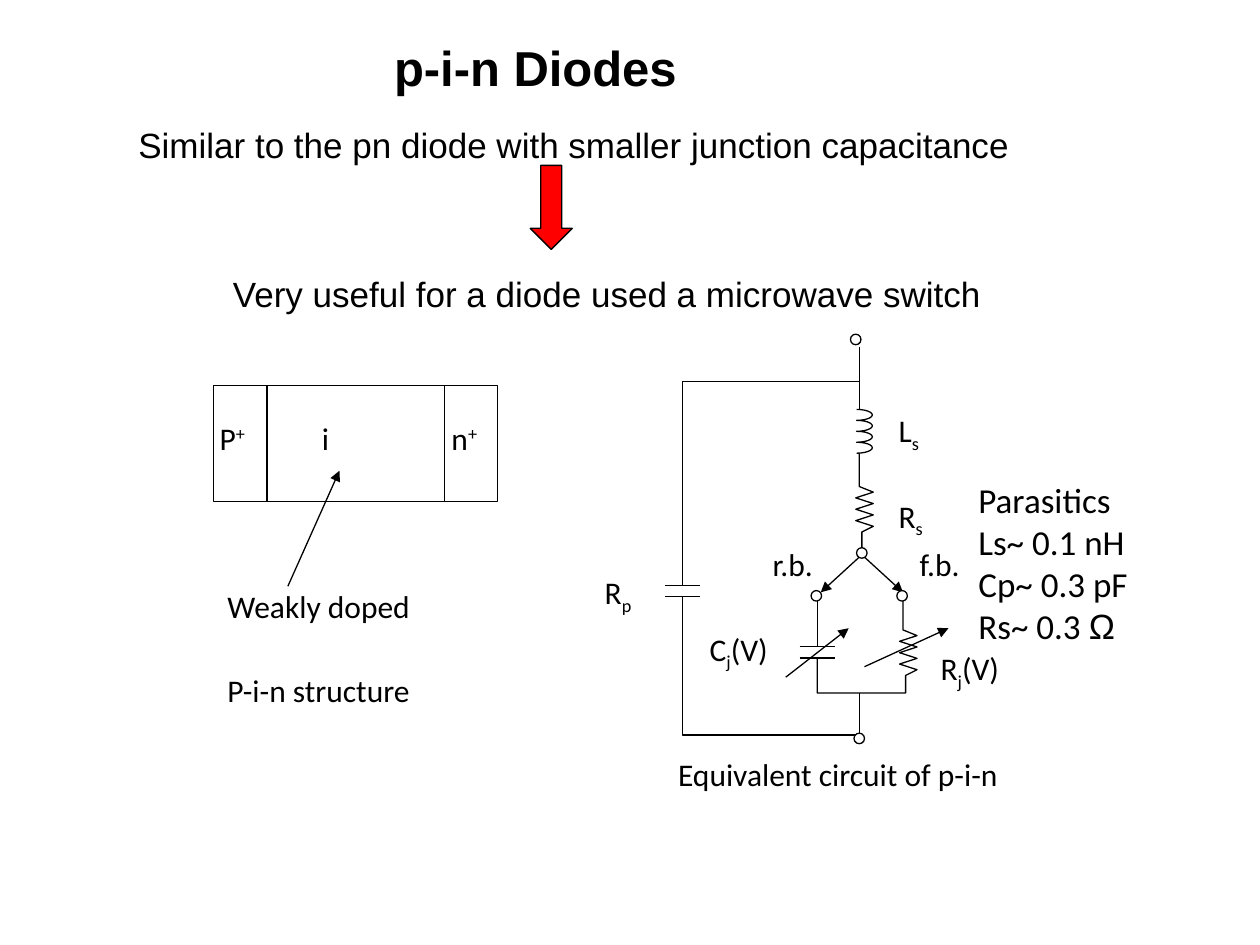
from dataclasses import dataclass
from math import cos, pi, sin

from lxml import etree
from pptx import Presentation
from pptx.dml.color import RGBColor
from pptx.enum import shapes, text
from pptx.oxml import ns
from pptx.util import Pt


@dataclass(frozen=True)
class Theme:
    ink: RGBColor = RGBColor(0, 0, 0)
    paper: RGBColor = RGBColor(255, 255, 255)
    red: RGBColor = RGBColor(255, 0, 0)
    head: str = "Arial"
    body: str = "Calibri"
    title: int = 28
    large: int = 20
    small: int = 18
    line: float = 0.75


THEME = Theme()
SUB, SUP = -25, 30


def style(run, font, size, bold=False, base=0):
    run.font.name, run.font.size, run.font.bold = font, Pt(size), bold
    run.font.color.rgb = THEME.ink
    if base:
        run.font._element.set("baseline", str(base * 1000))


def frame(slide, box, pad=(7.2, 3.6)):
    """Add a wrapping text box and return its text frame."""
    tf = slide.shapes.add_textbox(*map(Pt, box)).text_frame
    tf.word_wrap = True
    tf.margin_left = tf.margin_right = Pt(pad[0])
    tf.margin_top = tf.margin_bottom = Pt(pad[1])
    return tf


def label(slide, x, y, width, *parts):
    """Place a small label; a part is a string or a (string, baseline) pair."""
    para = frame(slide, (x, y, width, 30), (1.5, 0.75)).paragraphs[0]
    for part in parts:
        word, base = (part, 0) if isinstance(part, str) else part
        run = para.add_run()
        run.text = word
        style(run, THEME.body, THEME.small, base=base)


def pen(shape):
    shape.line.color.rgb = THEME.ink
    shape.line.width = Pt(THEME.line)


def solid(slide, kind, box, fill=None):
    shape = slide.shapes.add_shape(kind, *map(Pt, box))
    shape.shadow.inherit = False
    pen(shape)
    if fill is None:
        shape.fill.background()
    else:
        shape.fill.solid()
        shape.fill.fore_color.rgb = fill
    return shape


def wire(slide, start, end, arrow=False):
    link = slide.shapes.add_connector(
        shapes.MSO_CONNECTOR.STRAIGHT, *map(Pt, (*start, *end)))
    pen(link)
    if arrow:
        etree.SubElement(link.line._get_or_add_ln(), ns.qn("a:tailEnd"), type="triangle")
    etree.SubElement(link._element.spPr, ns.qn("a:effectLst"))


def trace(slide, points):
    """Draw an open, unfilled outline through the points."""
    spots = [(Pt(x), Pt(y)) for x, y in points]
    build = slide.shapes.build_freeform(*spots[0])
    build.add_line_segments(spots[1:], close=False)
    shape = build.convert_to_shape()
    shape.shadow.inherit = False
    shape.fill.background()
    pen(shape)


def zigzag(x, y):
    """Points of a resistor 26 high that starts on a wire at x, y."""
    teeth = [(x + (8 if i % 2 else -2), y + 3.25 * i) for i in range(1, 8)]
    return [(x, y), *teeth, (x + 1.5, y + 26)]


def coil(x, y, turns=4, pitch=6.25, reach=9, steps=12):
    """Points of a column of half ellipses that bulge to the right."""
    return [(x + reach * sin(pi * i / steps),
             y + pitch * (turn + (1 - cos(pi * i / steps)) / 2))
            for turn in range(turns) for i in range(steps + 1)]


def title(slide, box):
    tf = frame(slide, box)
    tf.vertical_anchor = text.MSO_ANCHOR.MIDDLE
    tf.text = "p-i-n Diodes"
    para = tf.paragraphs[0]
    para.alignment = text.PP_ALIGN.CENTER
    style(para.runs[0], THEME.head, THEME.title, bold=True)


def claims(slide, box):
    """Write the two statements and the arrow between them."""
    x, y = box[:2]
    tf = frame(slide, box)
    tf.text = ("Similar to the pn diode with smaller junction capacitance\n"
               "Very useful for a diode used a microwave switch")
    for para, indent, gap in zip(tf.paragraphs, (18, 72), (0, 61)):
        para._p.get_or_add_pPr().set("marL", str(Pt(indent)))
        para.space_before = Pt(gap)
        style(para.runs[0], THEME.head, THEME.large)
    solid(slide, shapes.MSO_SHAPE.DOWN_ARROW, (x + 249, y + 27.5, 24, 48), THEME.red)


def layers(slide, box):
    """Draw the doped layers with their captions."""
    x, y, width, high = box
    side = 30.5
    left = x
    for span in (side, width - 2 * side, side):
        solid(slide, shapes.MSO_SHAPE.RECTANGLE, (left, y, span, high))
        left += span
    label(slide, x + 2, y + 18, 30, "P", ("+", SUP))
    label(slide, x + 60.5, y + 18, 30, "i")
    label(slide, x + 134.5, y + 18, 30, "n", ("+", SUP))
    label(slide, x + 6.5, y + 114.5, 144, "Weakly doped")
    label(slide, x + 6.5, y + 162, 144, "P-i-n structure")
    wire(slide, (x + 42.5, y + 114.5), (x + 72, y + 48.5), arrow=True)


def circuit(slide, box):
    """Draw the equivalent circuit with its labels."""
    x, y = box[:2]

    def at(*points):
        return [(x + px, y + py) for px, py in points]

    left, mid, fork, low = 48, 149, 125, 229
    series = [(mid, 68), *zigzag(mid, 87), (150.5, 122)]
    branch = [(174, 152), *zigzag(174, 169), (175.5, 205), (fork, 205), (fork, 185)]
    for points in (coil(147.5, 43), series, branch,
                   [(mid, 27), (left, 27), (left, 143.5)],
                   [(left, 150), (left, low), (mid, low)]):
        trace(slide, at(*points))

    for ends in (((mid, 7), (mid, 43)), ((mid, 205), (mid, low)),
                 ((fork, 152), (fork, 178.5))):
        wire(slide, *at(*ends))
    for px, py in ((left, 143.5), (fork, 178.5)):
        for plate in (py, py + 6.5):
            wire(slide, *at((px - 10, plate), (px + 10, plate)))

    for ends in (((150.5, 126), (174, 147.5)), ((150.5, 126), (127, 147.5)),
                 ((152, 190), (200, 168)), ((107, 196), (143, 168))):
        wire(slide, *at(*ends), arrow=True)
    for px, py in at((147, 3), (150.5, 125), (173.5, 149.5), (124.5, 149.5), (mid, 231)):
        solid(slide, shapes.MSO_SHAPE.OVAL, (px - 3, py - 3, 6, 6), THEME.paper)

    for px, py, width, *parts in (
            (182, 119.5, 32, "f.b."),
            (98, 119.5, 32, "r.b."),
            (194, 179, 60, "R", ("j", SUB), "(V)"),
            (62, 168, 60, "C", ("j", SUB), "(V)"),
            (2, 136, 60, "R", ("p", SUB)),
            (170, 43, 60, "L", ("s", SUB)),
            (170, 92, 60, "R", ("s", SUB)),
            (44, 239.5, 192, "Equivalent circuit of p-i-n")):
        label(slide, x + px, y + py, width, *parts)


def values(slide, box):
    """List the typical parasitic values."""
    para = frame(slide, box).paragraphs[0]
    para.text = "Parasitics\vLs~ 0.1 nH\vCp~ 0.3 pF\vRs~ 0.3 "
    para.add_run().text = "Ω"
    for run in para.runs:
        style(run, THEME.body, THEME.large)
    para.runs[-1].font.name = THEME.head


def main():
    deck = Presentation()
    deck.slide_width, deck.slide_height = Pt(720), Pt(540)
    slide = deck.slides.add_slide(deck.slide_layouts[6])
    title(slide, (178.5, 20, 255, 36))
    claims(slide, (54, 67, 612, 150))
    layers(slide, (122, 220.5, 162.5, 66))
    circuit(slide, (342, 191, 260, 300))
    values(slide, (552, 270, 114, 108))
    deck.save("out.pptx")


if __name__ == "__main__":
    main()
